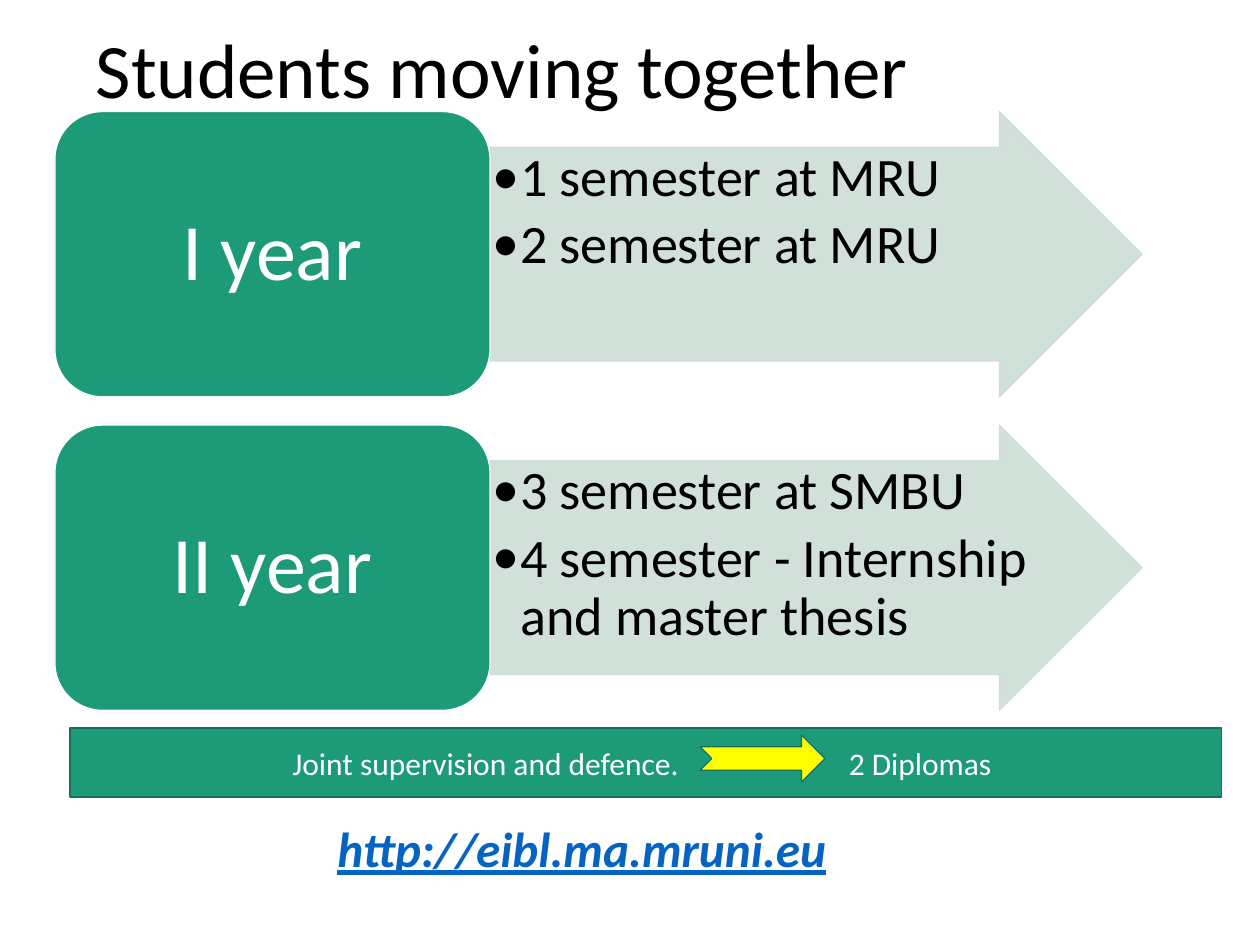
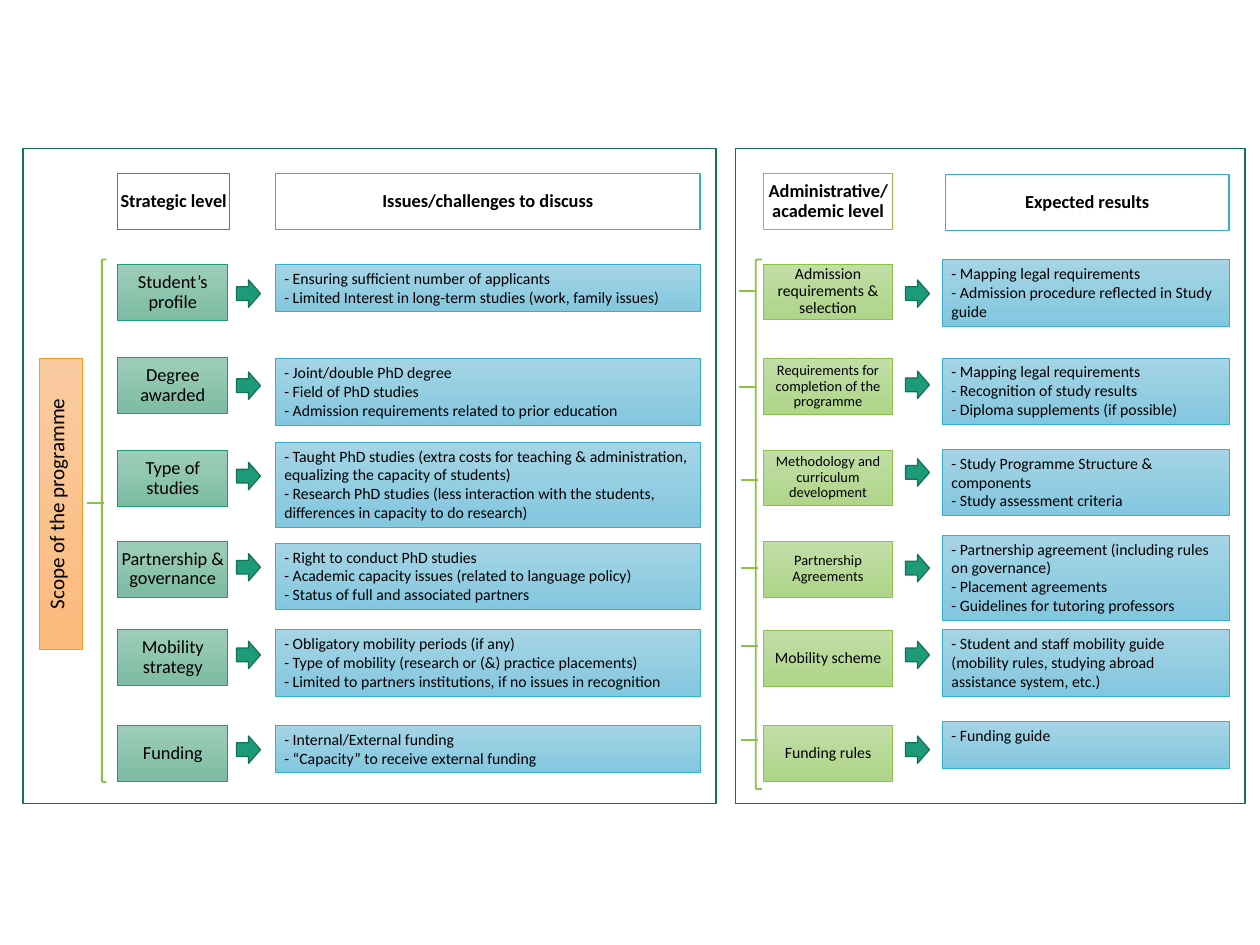
from pptx import Presentation
from pptx.dml.color import RGBColor
from pptx.enum.shapes import MSO_CONNECTOR, MSO_SHAPE
from pptx.enum.text import MSO_ANCHOR, MSO_AUTO_SIZE, PP_ALIGN
from pptx.oxml.ns import qn
from pptx.oxml.xmlchemy import OxmlElement
from pptx.util import Pt

PX = 9144  # 100 px to the inch
FONT = "Calibri"

RECT = MSO_SHAPE.RECTANGLE
ROUND = MSO_SHAPE.ROUNDED_RECTANGLE
ARROW = MSO_SHAPE.RIGHT_ARROW
NOTCH = MSO_SHAPE.NOTCHED_RIGHT_ARROW
BRACKET = MSO_SHAPE.LEFT_BRACKET
LINE = MSO_CONNECTOR.STRAIGHT
TOP, MIDDLE = MSO_ANCHOR.TOP, MSO_ANCHOR.MIDDLE
LEFT, CENTER = PP_ALIGN.LEFT, PP_ALIGN.CENTER
FIXED = MSO_AUTO_SIZE.NONE

BLACK = RGBColor(0x00, 0x00, 0x00)
WHITE = RGBColor(0xFF, 0xFF, 0xFF)
GREEN = RGBColor(0x1D, 0x9A, 0x78)
DARK = RGBColor(0x15, 0x72, 0x59)
PALE = RGBColor(0xCD, 0xDE, 0xD6)
YELLOW = RGBColor(0xFF, 0xFF, 0x00)
LIME = RGBColor(0x8B, 0xC1, 0x45)
BLUE = RGBColor(0x36, 0xAF, 0xCE)
ORANGE = RGBColor(0xF1, 0x9D, 0x19)
LINK = RGBColor(0x05, 0x63, 0xC1)
GREENS = (RGBColor(0x9E, 0xCD, 0xBA), RGBColor(0x7D, 0xBC, 0xA3))
LIMES = (RGBColor(0xC2, 0xDE, 0xA8), RGBColor(0xAE, 0xD5, 0x88))
BLUES = (RGBColor(0xA5, 0xD4, 0xE5), RGBColor(0x83, 0xC7, 0xDF))
PEACH = (RGBColor(0xFA, 0xCB, 0xA0), RGBColor(0xFC, 0xBA, 0x7D))

INSET = (10, 5, 10, 5)
TIGHT = (3, 3, 3, 3)
MID = {"alignment": CENTER, "line_spacing": 0.9}
BODY = {"alignment": LEFT}
ITEM = {"alignment": LEFT, "line_spacing": 0.9, "space_after": Pt(7)}

YEARS = [
    (126, "I year", ["1 semester at MRU", "2 semester at MRU"]),
    (480, "II year", ["3 semester at SMBU",
                      "4 semester - Internship and master thesis"]),
]

# level: top, label, size; arrow top; detail: top, height, lines
STRATEGY = [
    (299, "Student’s profile", 14.9, 316, 299, 53,
     ["- Ensuring sufficient number of applicants",
      "- Limited Interest in long-term studies (work, family issues)"]),
    (404, "Degree awarded", 14.9, 420, 405, 75,
     ["- Joint/double PhD degree", "- Field of PhD studies",
      "- Admission requirements related to prior education"]),
    (509, "Type of studies", 14.9, 522, 499, 96,
     ["- Taught PhD studies (extra costs for teaching & administration, "
      "equalizing the capacity of students)",
      "- Research PhD studies (less interaction with the students, "
      "differences in capacity to do research)"]),
    (611, "Partnership & governance", 14.9, 625, 613, 75,
     ["- Right to conduct PhD studies",
      "- Academic capacity issues (related to language policy)",
      "- Status of full and associated partners"]),
    (711, "Mobility strategy", 14.9, 724, 711, 75,
     ["- Obligatory mobility periods (if any)",
      "- Type of mobility (research or (&) practice placements)",
      "- Limited to partners institutions, if no issues in recognition"]),
    (819, "Funding", 14.9, 831, 819, 53,
     ["- Internal/External funding",
      "- “Capacity” to receive external funding"]),
]
ADMIN = [
    (298, "Admission requirements & selection", 12.8, 316, 293, 75,
     ["- Mapping legal requirements",
      "- Admission procedure reflected in Study guide"]),
    (405, "Requirements for completion of the programme", 11.7, 419, 404, 75,
     ["- Mapping legal requirements", "- Recognition of study results",
      "- Diploma supplements (if possible)"]),
    (508, "Methodology and curriculum development", 11.7, 518, 507, 75,
     ["- Study Programme Structure & components",
      "- Study assessment criteria"]),
    (611, "Partnership Agreements", 11.7, 626, 604, 96,
     ["- Partnership agreement (including rules on governance)",
      "- Placement agreements", "- Guidelines for tutoring professors"]),
    (712, "Mobility scheme", 12.8, 724, 711, 75,
     ["- Student and staff mobility guide (mobility rules, studying abroad "
      "assistance system, etc.)"]),
    (819, "Funding rules", 12.8, 831, 815, 53, ["- Funding guide"]),
]
TICKS = [(834, 329), (834, 437), (836, 542), (836, 641), (836, 729), (836, 836)]


def scale(box):
    return [n * PX for n in box]


def put(target, values):
    for name, value in values.items():
        setattr(target, name, value)


def node(parent, tag, **values):
    child = OxmlElement(tag)
    for name, value in values.items():
        child.set(name, str(value))
    parent.append(child)
    return child


class Deck:
    """Holds the file, the current slide and the shared style."""

    def __init__(self, width, height):
        self.prs = Presentation()
        self.prs.slide_width, self.prs.slide_height = scale((width, height))

    def add(self, title=None):
        layout = self.prs.slide_layouts[5 if title else 6]
        self.slide = self.prs.slides.add_slide(layout)
        if title:
            head = self.slide.shapes.title
            put(head, dict(zip(("left", "top", "width", "height"),
                               scale((98, 0, 1233, 167)))))
            self.text(head, [title], 62.6, para={**MID, "alignment": LEFT})

    def box(self, box):
        return self.slide.shapes.add_textbox(*scale(box))

    def text(self, shape, lines, size, color=BLACK, para=MID, anchor=MIDDLE,
             inset=INSET, bullet=None, tab=None, **font):
        frame = shape.text_frame
        sides = ("margin_left", "margin_top", "margin_right", "margin_bottom")
        put(frame, {"word_wrap": True, "auto_size": FIXED,
                    "vertical_anchor": anchor, **dict(zip(sides, scale(inset)))})
        for i, line in enumerate(lines):
            p = frame.add_paragraph() if i else frame.paragraphs[0]
            props = p._p.get_or_add_pPr()
            if bullet:
                props.set("marL", str(bullet * PX))
                props.set("indent", str(-bullet * PX))
                node(props, "a:buFont", typeface=FONT)
                node(props, "a:buChar", char="•")
            if tab:
                node(node(props, "a:tabLst"), "a:tab", pos=tab * PX, algn="l")
            put(p, para)
            run = p.add_run()
            run.text = line
            put(run.font, {"name": FONT, "size": Pt(size), **font})
            run.font.color.rgb = color

    def shape(self, kind, box, fill, line, width=1, alpha=None):
        """Fill is None, one colour, or the two ends of a downward gradient."""
        shape = self.slide.shapes.add_shape(kind, *scale(box))
        shape.shadow.inherit = False
        if fill is None:
            shape.fill.background()
        elif isinstance(fill, RGBColor):
            shape.fill.solid()
            shape.fill.fore_color.rgb = fill
        else:
            shape.fill.gradient()
            shape.fill.gradient_angle = 270
            for stop, color in zip(shape.fill.gradient_stops, fill):
                stop.color.rgb = color
        shape.line.color.rgb = line
        shape.line.width = Pt(width)
        if alpha:
            for color in shape.element.spPr.iter(qn("a:srgbClr")):
                node(color, "a:alpha", val=alpha * 1000)
        return shape

    def tick(self, x, y):
        line = self.slide.shapes.add_connector(
            LINE, *scale((x, y, x + 19, y)))
        line.line.color.rgb = LIME
        line.line.width = Pt(1.5)
        node(line.element.spPr, "a:effectLst")

    def year(self, top, name, items):
        arrow = self.shape(ARROW, (553, top, 736, 322), PALE, PALE, alpha=90)
        arrow.adjustments[0] = 0.75
        self.text(self.box((553, top + 40, 615, 242)), items, 44, para=ITEM,
                  anchor=TOP, inset=TIGHT, bullet=31)
        card = self.shape(ROUND, (62, top, 491, 322), GREEN, WHITE)
        self.text(card, [name], 65, WHITE)

    def head(self, box, name, line):
        self.text(self.shape(RECT, box, WHITE, line), [name], 14.9,
                  inset=TIGHT, bold=True)

    def rows(self, rows, level, arrow, detail, fill, line):
        """Level and detail are (left, width) of their columns."""
        for top, name, size, mid, start, height, lines in rows:
            box = self.shape(RECT, (level[0], top, level[1], 63),
                             fill, line, 0.5)
            self.text(box, [name], size, inset=TIGHT)
            self.shape(ARROW, (arrow, mid, 27, 31), GREEN, DARK)
            box = self.shape(RECT, (detail[0], start, detail[1], height),
                             BLUES, BLUE, 0.5)
            self.text(box, lines, 12.8, para=BODY, anchor=TOP)


def moving(deck):
    deck.add("Students moving together")
    for year in YEARS:
        deck.year(*year)
    deck.text(deck.box((371, 919, 604, 118)), ["http://eibl.ma.mruni.eu"], 40,
              LINK, BODY, TOP, bold=True, italic=True, underline=True)
    band = deck.shape(RECT, (79, 822, 1300, 78), GREEN, DARK)
    deck.text(band, ["Joint supervision and defence.\t2 Diplomas"], 25.6,
              WHITE, BODY, inset=(251, 5, 10, 5), tab=628)
    deck.shape(NOTCH, (790, 830, 141, 53), YELLOW, DARK)


def scope(deck):
    deck.add()
    for left, width in ((26, 782), (830, 575)):
        deck.shape(RECT, (left, 168, width, 739), None, DARK)
    deck.head((133, 196, 126, 63), "Strategic level", GREEN)
    deck.head((311, 196, 479, 63), "Issues/challenges to discuss", BLUE)
    deck.head((862, 196, 145, 63), "Administrative/academic level", LIME)
    deck.head((1067, 197, 320, 63), "Expected results", BLUE)
    deck.rows(STRATEGY, (133, 124), 267, (311, 479), GREENS, GREEN)
    deck.rows(ADMIN, (862, 145), 1022, (1064, 323), LIMES, LIME)
    side = deck.shape(RECT, (44, 405, 49, 328), PEACH, ORANGE, 0.5)
    deck.text(side, ["Scope of the programme"], 17.1,
              para={"alignment": CENTER}, anchor=TOP)
    side.element.txBody.find(qn("a:bodyPr")).set("vert", "vert270")
    for box in ((115, 293, 5, 590), (853, 293, 7, 598)):
        deck.shape(BRACKET, box, None, LIME, 1.5)
    for x, y in [(98, 568)] + TICKS:
        deck.tick(x, y)


def main():
    deck = Deck(1422, 1067)
    moving(deck)
    scope(deck)
    deck.prs.save("out.pptx")


if __name__ == "__main__":
    main()
